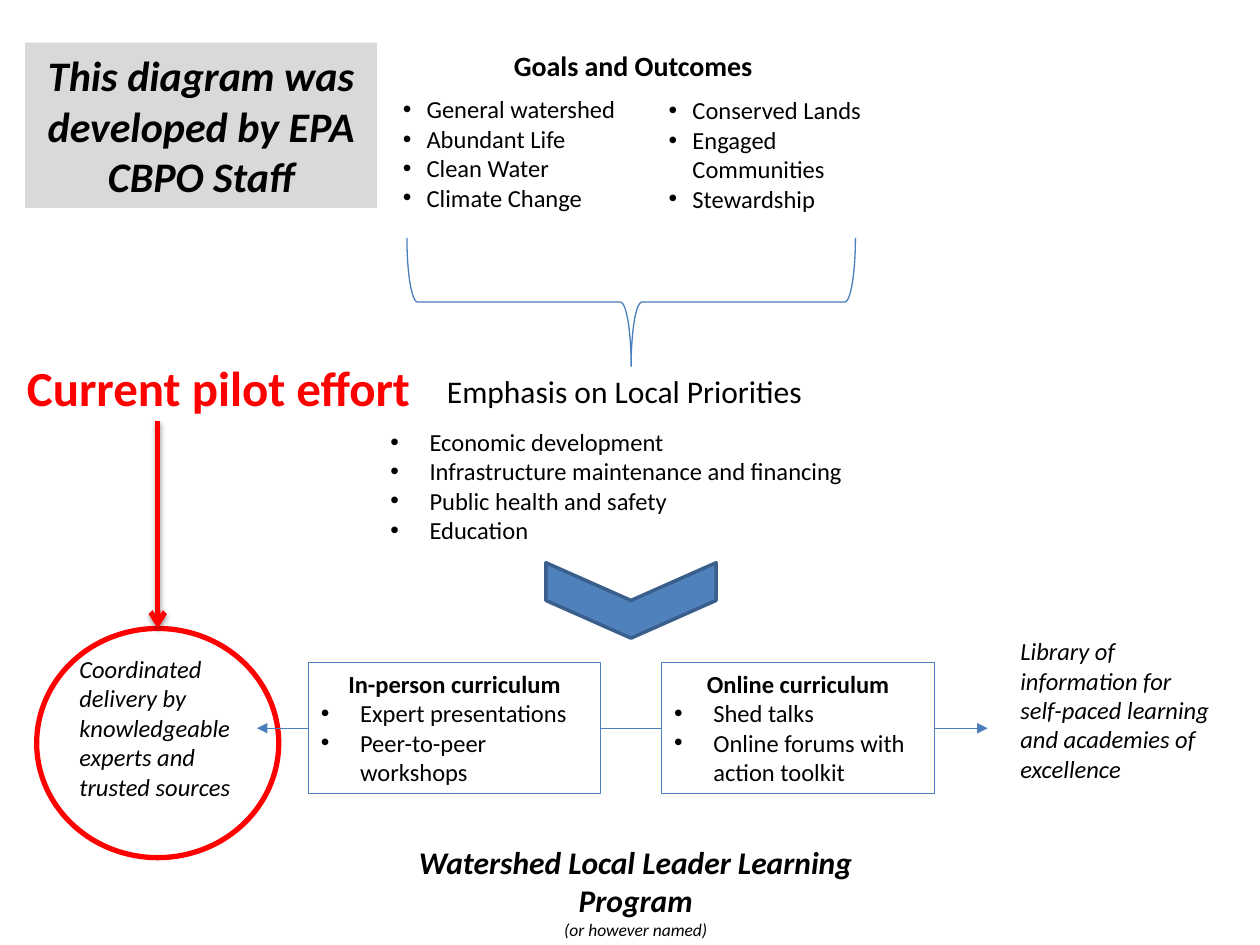
import pptx
import pptx.dml.color
import pptx.enum.shapes
import pptx.enum.text
import pptx.oxml
import pptx.oxml.ns
import pptx.util
from lxml import etree

Cm = pptx.util.Cm
Pt = pptx.util.Pt
RGBColor = pptx.dml.color.RGBColor
SHAPE = pptx.enum.shapes.MSO_SHAPE
ALIGN = pptx.enum.text.PP_ALIGN
qn = pptx.oxml.ns.qn

BLACK = RGBColor(0x00, 0x00, 0x00)
RED = RGBColor(0xFF, 0x00, 0x00)
GREY = RGBColor(0xD9, 0xD9, 0xD9)
BLUE = RGBColor(0x4F, 0x81, 0xBD)
LINE_BLUE = RGBColor(0x4B, 0x7E, 0xBC)
DARK_BLUE = RGBColor(0x3A, 0x5F, 0x8C)

deck = pptx.Presentation()
deck.slide_width, deck.slide_height = Cm(25.4), Cm(19.05)
page = deck.slides.add_slide(deck.slide_layouts[6])


def write(box, lines, size=14, bold=False, italic=False, color=BLACK,
          align=ALIGN.LEFT, hang=None):
    """Append lines to a shape; hang is the bullet indent in cm, if bulleted."""
    frame = box.text_frame
    frame.word_wrap = True
    for line in lines:
        para = frame.paragraphs[0]
        if para.text:
            para = frame.add_paragraph()
        para.text = line
        para.alignment = align
        if hang:
            properties = para._p.get_or_add_pPr()
            properties.set("marL", str(Cm(hang)))
            properties.set("indent", str(-Cm(hang)))
            etree.SubElement(properties, qn("a:buFont"), typeface="Arial")
            etree.SubElement(properties, qn("a:buChar"), char="•")
        font = para.font
        font.name, font.size = "Calibri", Pt(size)
        font.bold, font.italic = bold, italic
        font.color.rgb = color


def connect(start, end, color=LINE_BLUE, width=0.75, head=None):
    line = page.shapes.add_connector(
        pptx.enum.shapes.MSO_CONNECTOR.STRAIGHT, *map(Cm, start + end))
    line.line.color.rgb = color
    line.line.width = Pt(width)
    if head:
        etree.SubElement(line.line._get_or_add_ln(), qn("a:tailEnd"), type=head)
    etree.SubElement(line._element.spPr, qn("a:effectLst"))
    return line


# Plain text: place, lines, format
texts = [
    ((7.87, 1.78, 4.85, 2.64),
     ["General watershed", "Abundant Life", "Clean Water", "Climate Change"],
     dict(hang=0.48)),
    ((13.23, 1.8, 4.42, 2.64),
     ["Conserved Lands", "Engaged Communities", "Stewardship"], dict(hang=0.48)),
    ((10.11, 0.86, 5.44, 0.94), ["Goals and Outcomes"], dict(size=16, bold=True)),
    ((7.62, 8.48, 10.21, 2.64),
     ["Economic development", "Infrastructure maintenance and financing",
      "Public health and safety", "Education"], dict(hang=0.79)),
    ((8.76, 7.37, 8.1, 1.02), ["Emphasis on Local Priorities"], dict(size=18)),
    ((1.35, 13.06, 4.27, 3.25),
     ["Coordinated delivery by knowledgeable experts and trusted sources"],
     dict(italic=True)),
    ((20.32, 12.7, 4.37, 3.84),
     ["Library of information for self-paced learning and academies of excellence"],
     dict(italic=True)),
    ((0.05, 7.09, 8.71, 1.45), ["Current pilot effort"],
     dict(size=28, bold=True, color=RED, align=ALIGN.CENTER)),
]
for place, lines, style in texts:
    write(page.shapes.add_textbox(*map(Cm, place)), lines, **style)

program = page.shapes.add_textbox(Cm(7.06), Cm(16.87), Cm(11.51), Cm(2.24))
write(program, ["Watershed Local Leader Learning Program"], size=18, bold=True,
      italic=True, align=ALIGN.CENTER)
write(program, ["(or however named)"], size=10, italic=True, align=ALIGN.CENTER)

# Shapes: kind, place, rotation, fill, line colour, line width
shapes = [
    (SHAPE.LEFT_BRACE, (11.43, 1.57, 2.59, 9.04), 270, None, LINE_BLUE, 0.75),
    (SHAPE.CHEVRON, (11.96, 10.39, 1.52, 3.43), 90, BLUE, DARK_BLUE, 2),
    (SHAPE.RECTANGLE, (6.22, 13.36, 5.89, 2.64), 0, None, BLUE, 0.75),
    (SHAPE.RECTANGLE, (13.34, 13.36, 5.5, 2.64), 0, None, BLUE, 0.75),
    (SHAPE.OVAL, (0.74, 12.67, 4.88, 4.62), 0, None, RED, 3),
    (SHAPE.RECTANGLE, (0.51, 0.86, 7.09, 3.33), 0, GREY, None, 0),
]
drawn = []
for kind, place, rotation, fill, outline, width in shapes:
    shape = page.shapes.add_shape(kind, *map(Cm, place))
    shape.rotation = rotation
    shape.shadow.inherit = False
    if fill:
        shape.fill.solid()
        shape.fill.fore_color.rgb = fill
    else:
        shape.fill.background()
    if outline:
        shape.line.color.rgb = outline
        shape.line.width = Pt(width)
    else:
        shape.line.fill.background()
    drawn.append(shape)
brace, chevron, in_person, online, pilot_ring, credit = drawn

write(credit, ["This diagram was developed by EPA CBPO Staff"], size=24,
      bold=True, italic=True, align=ALIGN.CENTER)

curricula = [
    (in_person, "In-person curriculum",
     ["Expert presentations", "Peer-to-peer workshops"]),
    (online, "Online curriculum",
     ["Shed talks", "Online forums with action toolkit"]),
]
for box, heading, items in curricula:
    box.text_frame.vertical_anchor = pptx.enum.text.MSO_ANCHOR.TOP
    write(box, [heading], bold=True, align=ALIGN.CENTER)
    write(box, items, hang=0.79)

# Connectors
middle = 14.68
to_delivery = connect((6.22, middle), (5.18, middle), head="triangle")
to_delivery.begin_connect(in_person, 1)
to_library = connect((18.84, middle), (19.91, middle), head="triangle")
to_library.begin_connect(online, 3)
between = connect((12.11, middle), (13.34, middle))
between.begin_connect(in_person, 3)
between.end_connect(online, 1)

pilot_arrow = connect((3.18, 8.48), (3.18, 12.67), RED, 3, "arrow")
pilot_arrow.end_connect(pilot_ring, 0)
effects = pilot_arrow._element.spPr.find(qn("a:effectLst"))
shadow = etree.SubElement(effects, qn("a:outerShdw"), blurRad=str(Pt(3.1)),
                          dist=str(Pt(1.6)), dir="5400000", rotWithShape="0")
shade = etree.SubElement(shadow, qn("a:srgbClr"), val=str(BLACK))
etree.SubElement(shade, qn("a:alpha"), val="38000")

deck.save("out.pptx")
